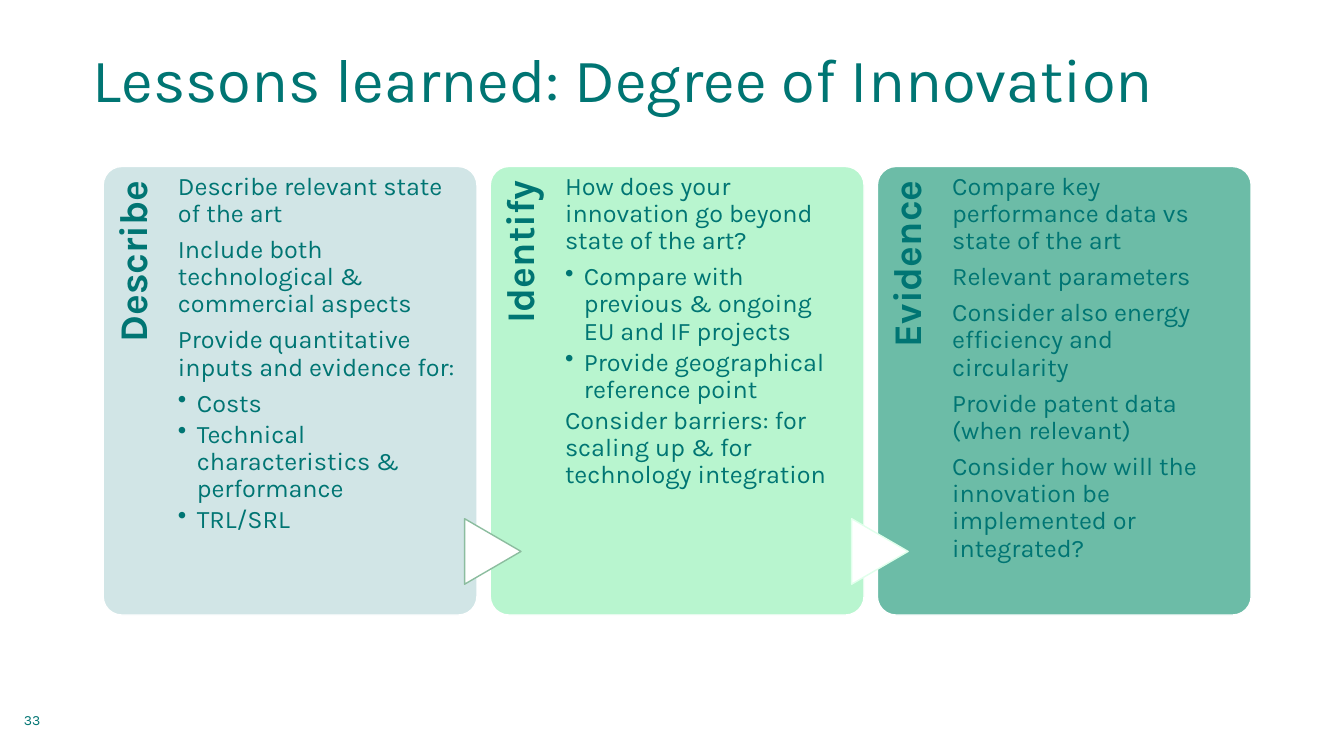
from lxml.etree import SubElement
from pptx import Presentation
from pptx.dml.color import RGBColor
from pptx.enum.shapes import MSO_SHAPE
from pptx.enum.text import MSO_ANCHOR, PP_ALIGN
from pptx.oxml.ns import qn
from pptx.util import Pt

FONT = "Karla"
TEAL = "007573"
WHITE = "FFFFFF"
BULLET = "• "

PANELS = [
    ("Describe", "D1E5E6", None, [
        "Describe relevant state of the art",
        "Include both technological & commercial aspects",
        "Provide quantitative inputs and evidence for:",
        "• Costs",
        "• Technical characteristics & performance",
        "• TRL/SRL",
    ]),
    ("Identify", "B8F5CF", "8CBD9F", [
        "How does your innovation go beyond state of the art?",
        "• Compare with previous & ongoing EU and IF projects",
        "• Provide geographical reference point",
        "Consider barriers: for scaling up & for technology integration",
    ]),
    ("Evidence", "6CBCA7", "E1FFEC", [
        "Compare key performance data vs state of the art",
        "Relevant parameters",
        "Consider also energy efficiency and circularity",
        "Provide patent data (when relevant)",
        "Consider how will the innovation be implemented or integrated?",
    ]),
]


def color(value):
    return RGBColor.from_string(value)


def style_paragraph(paragraph, size, bold=False):
    paragraph.line_spacing = 0.9
    paragraph.font.name = FONT
    paragraph.font.size = Pt(size)
    paragraph.font.bold = bold
    paragraph.font.color.rgb = color(TEAL)


def add_text_frame(slide, left, top, width, height, insets, anchor=MSO_ANCHOR.TOP):
    shape = slide.shapes.add_textbox(Pt(left), Pt(top), Pt(width), Pt(height))
    frame = shape.text_frame
    frame.word_wrap = True
    frame.vertical_anchor = anchor
    frame.margin_left, frame.margin_top, frame.margin_right, frame.margin_bottom = map(Pt, insets)
    return shape, frame


def add_filled_shape(slide, kind, left, top, width, height, fill, line):
    shape = slide.shapes.add_shape(kind, Pt(left), Pt(top), Pt(width), Pt(height))
    shape.shadow.inherit = False
    shape.fill.solid()
    shape.fill.fore_color.rgb = color(fill)
    shape.line.color.rgb = color(line)
    shape.line.width = Pt(1)
    return shape


def add_title(slide, left, top, width, height):
    _, frame = add_text_frame(slide, left, top, width, height, (0, 3.6, 7.2, 0), MSO_ANCHOR.MIDDLE)
    frame.text = "Lessons learned: Degree of Innovation"
    style_paragraph(frame.paragraphs[0], 44)


def add_slide_number(slide, left, top, width, height):
    _, frame = add_text_frame(slide, left, top, width, height, (7.2, 3.6, 7.2, 3.6), MSO_ANCHOR.BOTTOM)
    frame.text = "33"
    style_paragraph(frame.paragraphs[0], 10)
    frame.paragraphs[0].line_spacing = 1.0


def add_heading(slide, left, top, width, height, heading):
    shape, frame = add_text_frame(
        slide, left + (width - height) / 2, top + (height - width) / 2,
        height, width, (0, 7.2, 10, 0))
    shape.rotation = 270
    frame.text = heading
    style_paragraph(frame.paragraphs[0], 28, bold=True)
    frame.paragraphs[0].alignment = PP_ALIGN.RIGHT


def add_points(slide, left, top, width, height, points):
    _, frame = add_text_frame(slide, left, top, width, height, (0, 5, 0, 0))
    frame.text = "\n".join(point.removeprefix(BULLET) for point in points)
    for paragraph, point in zip(frame.paragraphs, points):
        bulleted = point.startswith(BULLET)
        paragraph.space_after = Pt(2.7 if bulleted else 6.3)
        if bulleted:
            paragraph.level = 1
            properties = paragraph._p.get_or_add_pPr()
            properties.set("marL", str(Pt(13.5)))
            properties.set("indent", str(Pt(-13.5)))
            SubElement(properties, qn("a:buChar")).set("char", BULLET.strip())
        style_paragraph(paragraph, 18)


def add_arrow(slide, center_x, center_y, line):
    width, height = 46.8, 40.3
    arrow = add_filled_shape(
        slide, MSO_SHAPE.FLOWCHART_EXTRACT, center_x - width / 2,
        center_y - height / 2, width, height, WHITE, line)
    arrow.rotation = 90


def add_panel(slide, left, top, width, height, panel):
    heading, fill, arrow_line, points = panel
    card = add_filled_shape(
        slide, MSO_SHAPE.ROUNDED_RECTANGLE, left, top, width, height, fill, WHITE)
    card.adjustments[0] = 0.05
    heading_width = width * 0.2
    add_heading(slide, left, top, heading_width, height * 0.82, heading)
    if arrow_line:
        add_arrow(slide, left + 1.8, top + 275, arrow_line)
    add_points(slide, left + heading_width, top, width * 0.745, height, points)


def main():
    presentation = Presentation()
    presentation.slide_width = Pt(960)
    presentation.slide_height = Pt(540)
    slide = presentation.slides.add_slide(presentation.slide_layouts[6])
    add_slide_number(slide, 10, 494.6, 56, 29)
    add_title(slide, 66.3, 24.5, 828, 65.5)
    for index, panel in enumerate(PANELS):
        add_panel(slide, 73.7 + index * 276.5, 118.9, 267, 320.4, panel)
    presentation.save("out.pptx")


if __name__ == "__main__":
    main()
